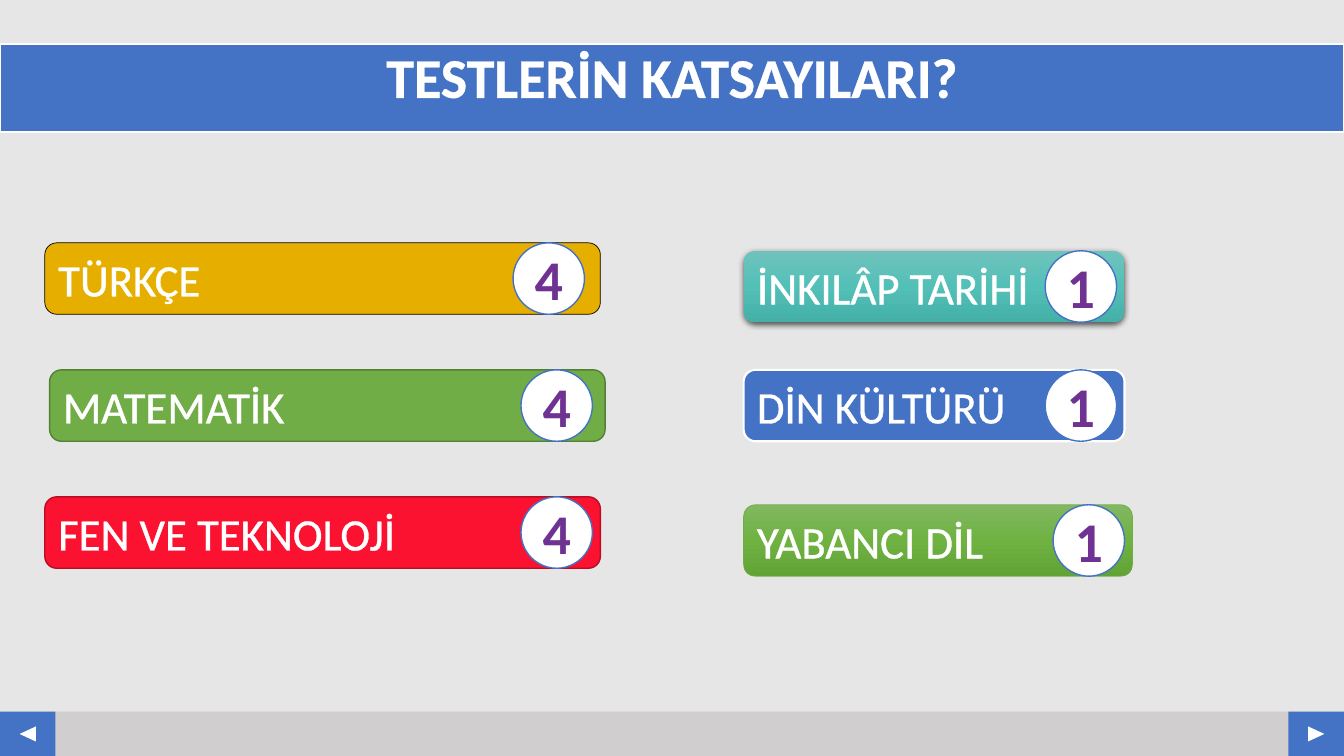
from pptx import Presentation
from pptx.dml.color import RGBColor
from pptx.enum.shapes import MSO_SHAPE
from pptx.enum.text import MSO_ANCHOR, PP_ALIGN
from pptx.oxml import parse_xml
from pptx.oxml.ns import nsdecls
from pptx.util import Cm, Pt

RECT = MSO_SHAPE.RECTANGLE
ARROW = MSO_SHAPE.ISOSCELES_TRIANGLE
BAR = MSO_SHAPE.FLOWCHART_ALTERNATE_PROCESS
OVAL = MSO_SHAPE.OVAL
TOP, MIDDLE = MSO_ANCHOR.TOP, MSO_ANCHOR.MIDDLE
LEFT, CENTER = PP_ALIGN.LEFT, PP_ALIGN.CENTER
BLUE, WHITE, PURPLE = "4472C4", "FFFFFF", "6F3293"
WIDE, HIGH = 33.87, 19.05
NS = nsdecls("a")


def paint(shape, fill, line=None, width=1):
    """Fill a shape with one colour or a list of vertical gradient colours."""
    shape.shadow.inherit = False
    if isinstance(fill, list):
        shape.fill.background()
        stops = "".join(
            f'<a:gs pos="{i * 50000}"><a:srgbClr val="{c}"/></a:gs>'
            for i, c in enumerate(fill))
        blend = parse_xml(f'<a:gradFill {NS} rotWithShape="1"><a:gsLst>{stops}'
                          '</a:gsLst><a:lin ang="5400000" scaled="0"/></a:gradFill>')
        props = shape.element.spPr
        props.replace(props.find("{*}noFill"), blend)
    else:
        shape.fill.solid()
        shape.fill.fore_color.rgb = RGBColor.from_string(fill)
    if line:
        shape.line.color.rgb = RGBColor.from_string(line)
        shape.line.width = Pt(width)
    else:
        shape.line.fill.background()


def write(shape, text, size, color, align, anchor, bold):
    """Add one run of text; white text also gets a white outline."""
    frame = shape.text_frame
    frame.word_wrap = True
    frame.vertical_anchor = anchor
    para = frame.paragraphs[0]
    para.alignment = align
    run = para.add_run()
    run.text = text
    font = run.font
    font.name, font.size, font.bold = "Calibri", Pt(size), bold
    font.color.rgb = RGBColor.from_string(color)
    if color == WHITE:
        run._r.get_or_add_rPr().insert(0, parse_xml(
            f'<a:ln {NS} w="18415"><a:solidFill><a:srgbClr val="{WHITE}"/>'
            '</a:solidFill></a:ln>'))


deck = Presentation()
deck.slide_width, deck.slide_height = Cm(WIDE), Cm(HIGH)
slide = deck.slides.add_slide(deck.slide_layouts[5])
slide.background.fill.solid()
slide.background.fill.fore_color.rgb = RGBColor.from_string("E7E6E6")
shapes = slide.shapes

# Footer strip with a button at each end
foot, side = 1.12, 1.4
strip = shapes.add_shape(RECT, 0, Cm(HIGH - foot), Cm(WIDE), Cm(foot))
paint(strip, "D0CECE")
for x, turn in ((0, 270), (WIDE - side, 90)):
    button = shapes.add_shape(RECT, Cm(x), Cm(HIGH - foot), Cm(side), Cm(foot))
    paint(button, BLUE)
    arrow = shapes.add_shape(ARROW, Cm(x + 0.51), Cm(18.29), Cm(0.38), Cm(0.41))
    arrow.rotation = turn
    paint(arrow, WHITE)

# Title band
title = shapes.title
title.left, title.top = Cm(0), Cm(1.12)
title.width, title.height = Cm(WIDE), Cm(2.21)
paint(title, BLUE, WHITE, 1.5)
write(title, "TESTLERİN KATSAYILARI?", 40, WHITE, CENTER, TOP, True)
title.text_frame.paragraphs[0].line_spacing = 0.9

# Subjects: name, weight, left, top, width, badge left, fill, line, line width
subjects = [
    ("TÜRKÇE", "4", 1.13, 6.12, 14, 12.93, "E6AF00", "000000", 0.5),
    ("MATEMATİK", "4", 1.25, 9.32, 14, 13.13, "70AD47", "538035", 1),
    ("FEN VE TEKNOLOJİ", "4", 1.13, 12.52, 14, 13.13, "FA1230", "B90D24", 1),
    ("İNKILÂP TARİHİ", "1", 18.74, 6.32, 9.6, 26.34,
     ["6FC3BC", "53C0B8", "44B0A8"], None, 0),
    ("DİN KÜLTÜRÜ", "1", 18.74, 9.32, 9.6, 26.34, BLUE, WHITE, 1.5),
    ("YABANCI DİL", "1", 18.74, 12.72, 9.8, 26.54,
     ["81B861", "6FB242", "62A336"], "70AD47", 0.5),
]
tall = 1.8
for name, weight, x, y, wide, spot, fill, line, width in subjects:
    bar = shapes.add_shape(BAR, Cm(x), Cm(y), Cm(wide), Cm(tall))
    paint(bar, fill, line, width)
    write(bar, name, 32, WHITE, LEFT, MIDDLE, False)
    if not line:  # the bar without an outline casts a shadow
        bar.element.spPr.find("{*}effectLst").append(parse_xml(
            f'<a:outerShdw {NS} blurRad="57150" dist="19050" dir="5400000" '
            'algn="ctr" rotWithShape="0"><a:srgbClr val="000000">'
            '<a:alpha val="63000"/></a:srgbClr></a:outerShdw>'))
    badge = shapes.add_shape(OVAL, Cm(spot), Cm(y), Cm(tall), Cm(tall))
    paint(badge, WHITE, BLUE)
    write(badge, weight, 40, PURPLE, CENTER, MIDDLE, True)
    badge.text_frame.margin_left = badge.text_frame.margin_right = 0

deck.save("out.pptx")
